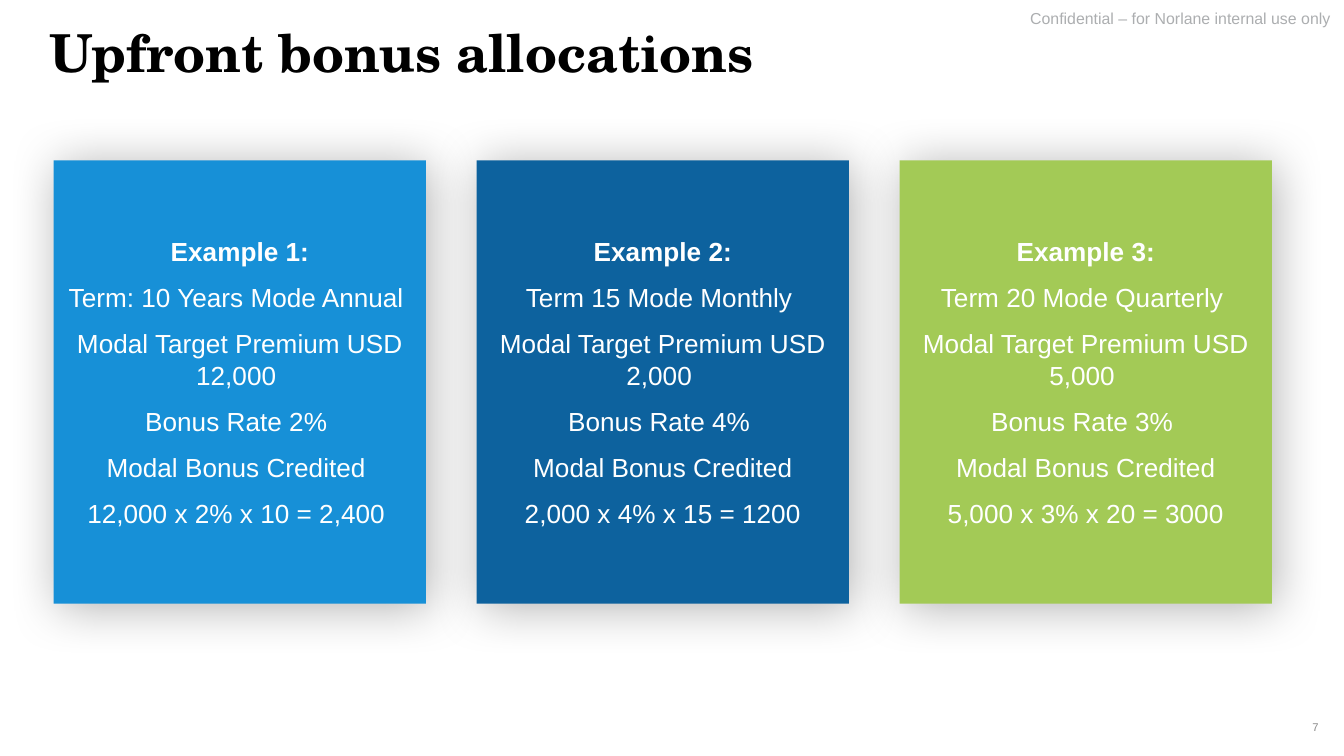
from lxml import etree
from pptx import Presentation
from pptx.dml.color import RGBColor
from pptx.enum.shapes import MSO_SHAPE
from pptx.enum.text import MSO_ANCHOR, PP_ALIGN
from pptx.oxml.ns import qn
from pptx.util import Inches, Pt

RECTANGLE = MSO_SHAPE.RECTANGLE
TOP, MIDDLE = MSO_ANCHOR.TOP, MSO_ANCHOR.MIDDLE
LEFT, CENTER, RIGHT = PP_ALIGN.LEFT, PP_ALIGN.CENTER, PP_ALIGN.RIGHT

BLACK = RGBColor(0x00, 0x00, 0x00)
WHITE = RGBColor(0xFF, 0xFF, 0xFF)
SILVER = RGBColor(0xAC, 0xAE, 0xB0)
GRAY = RGBColor(0x8C, 0x8C, 0x8C)
BLUE = RGBColor(0x17, 0x90, 0xD7)
NAVY = RGBColor(0x0D, 0x62, 0x9E)
GREEN = RGBColor(0xA3, 0xCA, 0x56)

BODY_FONT, TITLE_FONT = "Arial", "TeX Gyre Schola"
SLIDE_WIDTH = Inches(10)
SLIDE_HEIGHT = SLIDE_WIDTH * 9 // 16
CELL = SLIDE_WIDTH // 100  # square grid, 100 columns wide

# Cards, in grid cells
CARD_LEFT, CARD_TOP, CARD_WIDTH, CARD_HEIGHT = 4, 11.93, 27.7, 33
CARD_STEP = 31.47

EXAMPLES = [
    (BLUE, ["Example 1:", "Term: 10 Years Mode Annual ",
            "Modal Target Premium USD 12,000 ", "Bonus Rate 2% ",
            "Modal Bonus Credited ", "12,000 x 2% x 10 = 2,400 "]),
    (NAVY, ["Example 2:", "Term 15 Mode Monthly ",
            "Modal Target Premium USD 2,000 ", "Bonus Rate 4% ",
            "Modal Bonus Credited", " 2,000 x 4% x 15 = 1200 "]),
    (GREEN, ["Example 3:", "Term 20 Mode Quarterly ",
             "Modal Target Premium USD 5,000 ", "Bonus Rate 3% ",
             "Modal Bonus Credited", " 5,000 x 3% x 20 = 3000 "]),
]


def write(paragraph, text, *, size, color, font=BODY_FONT, bold=False,
          align=LEFT, line_spacing=1.0, before=0, after=0):
    """Put formatted text into a paragraph."""
    paragraph.alignment = align
    paragraph.line_spacing = line_spacing
    paragraph.space_before, paragraph.space_after = Pt(before), Pt(after)
    run = paragraph.add_run()
    run.text = text
    run.font.name, run.font.size, run.font.bold = font, Pt(size), bold
    run.font.color.rgb = color


def add_soft_shadow(shape, blur=27, distance=3, degrees=45, opacity=30):
    """Fill the shape's empty effect list with an outer shadow."""
    shape.shadow.inherit = False
    effects = shape._element.spPr.find(qn("a:effectLst"))
    shadow = etree.SubElement(
        effects, qn("a:outerShdw"), blurRad=str(Pt(blur)),
        dist=str(Pt(distance)), dir=str(degrees * 60000),
        algn="ctr", rotWithShape="0")
    color = etree.SubElement(shadow, qn("a:srgbClr"), val=str(BLACK))
    etree.SubElement(color, qn("a:alpha"), val=str(opacity * 1000))


class Deck:
    """Holds the presentation, its style and the current slide."""

    def __init__(self):
        self.presentation = Presentation()
        self.presentation.slide_width = SLIDE_WIDTH
        self.presentation.slide_height = SLIDE_HEIGHT
        self.slide = self.presentation.slides.add_slide(
            self.presentation.slide_layouts[6])

    def place(self, *cells):
        return [round(cell * CELL) for cell in cells]

    def label(self, box, text, *, margins=(0.07, 0.04), anchor=TOP, **style):
        frame = self.slide.shapes.add_textbox(*self.place(*box)).text_frame
        frame.word_wrap = True
        frame.vertical_anchor = anchor
        frame.margin_left = frame.margin_right = Inches(margins[0])
        frame.margin_top = frame.margin_bottom = Inches(margins[1])
        write(frame.paragraphs[0], text, **style)

    def card(self, box, fill, lines):
        shape = self.slide.shapes.add_shape(RECTANGLE, *self.place(*box))
        shape.fill.solid()
        shape.fill.fore_color.rgb = fill
        shape.line.fill.background()
        add_soft_shadow(shape)
        frame = shape.text_frame
        frame.word_wrap = True
        frame.vertical_anchor = MIDDLE
        for index, line in enumerate(lines):
            paragraph = frame.add_paragraph() if index else frame.paragraphs[0]
            write(paragraph, line, size=14, color=WHITE, bold=index == 0,
                  align=CENTER, before=5 if index else 0, after=3)


def main():
    deck = Deck()

    # Confidentiality line and title
    deck.label((69.4, 0.8, 30.6, 1.7),
               "Confidential – for Norlane internal use only",
               margins=(0.1, 0), size=8.5, color=SILVER, align=RIGHT,
               line_spacing=0.9)
    deck.label((3, 1.65, 75.9, 5.4), "Upfront bonus allocations",
               size=28, color=BLACK, font=TITLE_FONT, bold=True,
               line_spacing=0.9)

    # Slide number
    deck.label((91.4, 52.6, 7.4, 3), "7", anchor=MIDDLE, size=6, color=GRAY,
               align=RIGHT)

    # Example cards
    for column, (fill, lines) in enumerate(EXAMPLES):
        left = CARD_LEFT + column * CARD_STEP
        deck.card((left, CARD_TOP, CARD_WIDTH, CARD_HEIGHT), fill, lines)

    deck.presentation.save("out.pptx")


if __name__ == "__main__":
    main()
